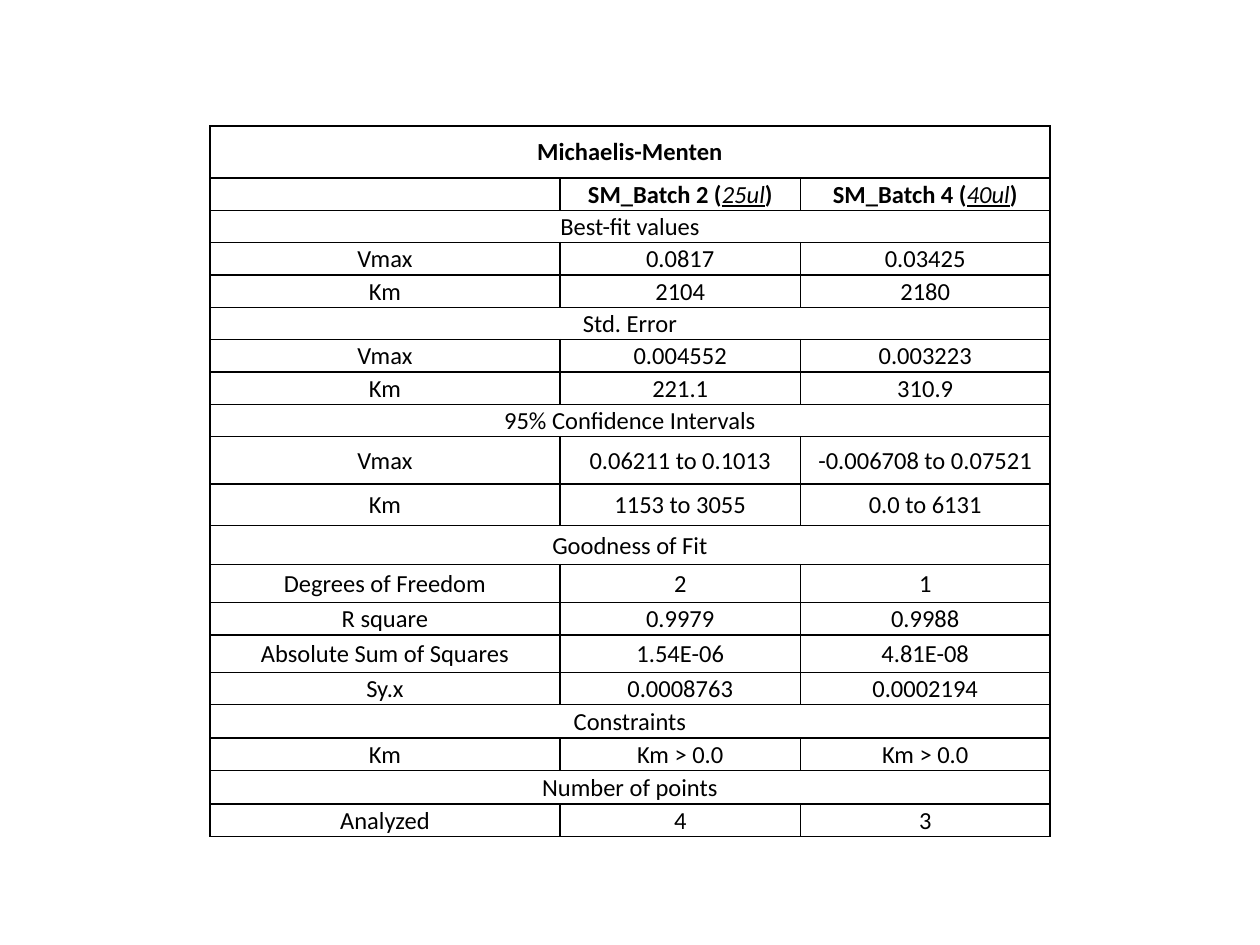
import pptx
import pptx.dml.color
import pptx.enum.text
import pptx.oxml.ns
import pptx.util
from lxml import etree

Pt = pptx.util.Pt
BLACK = pptx.dml.color.RGBColor(0, 0, 0)

COLUMN_WIDTHS = (200, 137.5, 142.5)
ROW_HEIGHT = 18.5
TALL_ROWS = {0: 29.7, 9: 27, 10: 23.8, 11: 22.4, 12: 21.6, 14: 21.4, 16: 19.2, 18: 19.2}

CELL_FORMAT = {
    "margin_left": Pt(0.7),
    "margin_right": Pt(0.7),
    "margin_top": Pt(0.7),
    "margin_bottom": 0,
    "vertical_anchor": pptx.enum.text.MSO_ANCHOR.MIDDLE,
}
PLAIN = {"name": "Calibri", "size": Pt(14), "bold": False}
BOLD = {**PLAIN, "bold": True}
VOLUME = {**PLAIN, "italic": True, "underline": True}

# A row with a single entry is a heading across all columns.
ROWS = [
    ("Michaelis-Menten",),
    ("", ("SM_Batch 2 (", "25ul", ")"), ("SM_Batch 4 (", "40ul", ")")),
    ("Best-fit values",),
    ("Vmax", "0.0817", "0.03425"),
    ("Km", "2104", "2180"),
    ("Std. Error",),
    ("Vmax", "0.004552", "0.003223"),
    ("Km", "221.1", "310.9"),
    ("95% Confidence Intervals",),
    ("Vmax", "0.06211 to 0.1013", "-0.006708 to 0.07521"),
    ("Km", "1153 to 3055", "0.0 to 6131"),
    ("Goodness of Fit",),
    ("Degrees of Freedom", "2", "1"),
    ("R square", "0.9979", "0.9988"),
    ("Absolute Sum of Squares", "1.54E-06", "4.81E-08"),
    ("Sy.x", "0.0008763", "0.0002194"),
    ("Constraints",),
    ("Km", "Km > 0.0", "Km > 0.0"),
    ("Number of points",),
    ("Analyzed", "4", "3"),
]


def apply_format(target, values):
    for name, value in values.items():
        setattr(target, name, value)


def add_borders(cell):
    properties = cell._tc.get_or_add_tcPr()
    qn = pptx.oxml.ns.qn
    for side in ("a:lnL", "a:lnR", "a:lnT", "a:lnB"):
        line = etree.SubElement(properties, qn(side), w=str(Pt(1)))
        fill = etree.SubElement(line, qn("a:solidFill"))
        etree.SubElement(fill, qn("a:srgbClr"), val=str(BLACK))


def add_span(para, text, values):
    span = para.add_run()
    span.text = text
    apply_format(span.font, values)
    span.font.color.rgb = BLACK


def fill_cell(cell, content, values):
    """Write plain text, or a batch name given as three parts."""
    apply_format(cell, CELL_FORMAT)
    para = cell.text_frame.paragraphs[0]
    para.alignment = pptx.enum.text.PP_ALIGN.CENTER
    if isinstance(content, tuple):
        for text, part_values in zip(content, (BOLD, VOLUME, BOLD)):
            add_span(para, text, part_values)
    elif content:
        add_span(para, content, values)
    else:
        # The end mark sets the line height of an empty cell.
        etree.SubElement(para._p, pptx.oxml.ns.qn("a:endParaRPr"), sz="1400")


def add_results_table(page):
    heights = [TALL_ROWS.get(index, ROW_HEIGHT) for index in range(len(ROWS))]
    frame = page.shapes.add_table(
        len(ROWS), len(COLUMN_WIDTHS), Pt(120), Pt(72),
        Pt(sum(COLUMN_WIDTHS)), Pt(sum(heights)))
    table = frame.table
    apply_format(table, {"first_row": False, "horz_banding": False})
    for column, width in zip(table.columns, COLUMN_WIDTHS):
        column.width = Pt(width)
    for index, (row, height, contents) in enumerate(zip(table.rows, heights, ROWS)):
        row.height = Pt(height)
        for cell in row.cells:
            add_borders(cell)
            cell.fill.background()
        if len(contents) == 1:
            row.cells[0].merge(row.cells[len(COLUMN_WIDTHS) - 1])
        for cell, content in zip(row.cells, contents):
            fill_cell(cell, content, BOLD if index == 0 else PLAIN)


def main():
    deck = pptx.Presentation()
    deck.slide_width, deck.slide_height = Pt(720), Pt(540)
    page = deck.slides.add_slide(deck.slide_layouts[6])
    add_results_table(page)
    deck.save("out.pptx")


if __name__ == "__main__":
    main()
